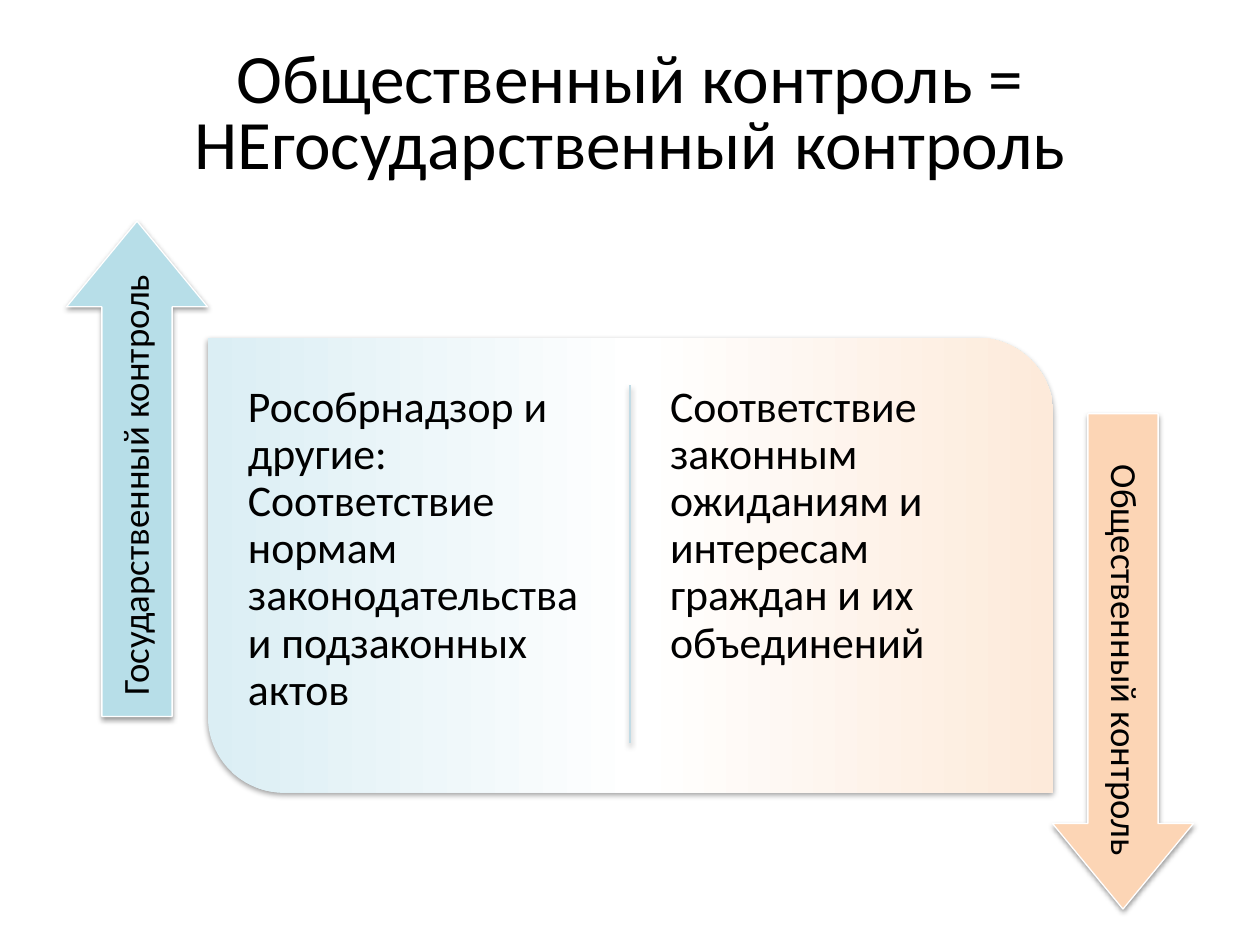
from lxml import etree
from pptx import Presentation
from pptx.dml.color import RGBColor
from pptx.enum.shapes import MSO_CONNECTOR, MSO_SHAPE
from pptx.enum.text import MSO_ANCHOR, PP_ALIGN
from pptx.oxml.ns import qn
from pptx.util import Pt

LEFT, CENTER, RIGHT = PP_ALIGN.LEFT, PP_ALIGN.CENTER, PP_ALIGN.RIGHT
TOP, MIDDLE = MSO_ANCHOR.TOP, MSO_ANCHOR.MIDDLE
PANEL, ARROW = MSO_SHAPE.ROUND_2_DIAG_RECTANGLE, MSO_SHAPE.RIGHT_ARROW
STRAIGHT = MSO_CONNECTOR.STRAIGHT

ARROW_LENGTH, ARROW_WIDTH = 283, 80.6
LABEL_LENGTH, LABEL_WIDTH = 259.2, 40.3
LABEL_SHIFT = 12.2  # from the arrow's centre towards its tail
PANEL_STOPS = [(0, "DBEEF4"), (51, "FFFFFF"), (100, "FDEADA")]
COLUMNS = [
    (134.6, "Рособрнадзор и другие: Соответствие нормам законодательства "
            "и подзаконных актов"),
    (375.8, "Соответствие законным ожиданиям и интересам граждан "
            "и их объединений"),
]
# centre x, centre y, rotation, fill, label
ARROWS = [
    (78.3, 267.9, 270, "B7DEE8", "Государственный контроль"),
    (641.7, 378, 90, "FCD5B5", "Общественный контроль"),
]


def color(hex_code):
    return RGBColor.from_string(hex_code)


def add_child(parent, tag, **attributes):
    child = etree.SubElement(parent, qn(tag))
    for name, value in attributes.items():
        child.set(name, str(value))
    return child


def add_soft_shadow(effects):
    """Fill an a:effectLst with the shadow that all drawn objects share."""
    shadow = add_child(effects, "a:outerShdw", blurRad=Pt(3.1), dist=Pt(1.6),
                       dir=90 * 60000, rotWithShape=0)
    black = add_child(shadow, "a:srgbClr", val="000000")
    add_child(black, "a:alpha", val=38000)


def add_shape(page, kind, left, top, width, height, adjustments):
    shape = page.shapes.add_shape(kind, Pt(left), Pt(top), Pt(width), Pt(height))
    for index, value in enumerate(adjustments):
        shape.adjustments[index] = value
    shape.shadow.inherit = False
    add_soft_shadow(shape.element.spPr.find(qn("a:effectLst")))
    return shape


def add_text(page, text, left, top, width, height, size, align=LEFT, anchor=TOP,
             inset=7.2, spacing=0.9, rotation=0):
    box = page.shapes.add_textbox(Pt(left), Pt(top), Pt(width), Pt(height))
    box.rotation = rotation
    frame = box.text_frame
    frame.word_wrap = True
    frame.vertical_anchor = anchor
    frame.margin_left = frame.margin_right = Pt(inset)
    frame.margin_top = frame.margin_bottom = Pt(inset)
    para = frame.paragraphs[0]
    para.alignment = align
    para.line_spacing = spacing
    span = para.add_run()
    span.text = text
    span.font.name = "Calibri"
    span.font.size = Pt(size)
    span.font.color.rgb = color("000000")


def add_panel(page):
    panel = add_shape(page, PANEL, 118.8, 193, 483.1, 259.9, [0, 0.167])
    panel.line.fill.background()
    panel.fill.gradient()
    panel.fill.gradient_angle = 0
    stops = panel.element.spPr.find(qn("a:gradFill")).find(qn("a:gsLst"))
    for stop in list(stops):
        stops.remove(stop)
    for percent, hex_code in PANEL_STOPS:
        stop = add_child(stops, "a:gs", pos=percent * 1000)
        add_child(stop, "a:srgbClr", val=hex_code)


def add_divider(page, x, top, bottom):
    divider = page.shapes.add_connector(STRAIGHT, Pt(x), Pt(top), Pt(x), Pt(bottom))
    divider.line.color.rgb = color("C1DBE5")
    divider.line.width = Pt(0.75)
    add_soft_shadow(add_child(divider.element.spPr, "a:effectLst"))


def add_labelled_arrow(page, center_x, center_y, rotation, fill, label):
    arrow = add_shape(page, ARROW, center_x - ARROW_LENGTH / 2,
                      center_y - ARROW_WIDTH / 2, ARROW_LENGTH, ARROW_WIDTH,
                      [0.498, 0.607])
    arrow.rotation = rotation
    arrow.fill.solid()
    arrow.fill.fore_color.rgb = color(fill)
    arrow.line.color.rgb = color("FFFFFF")
    arrow.line.width = Pt(0.75)
    shift = LABEL_SHIFT if rotation == 270 else -LABEL_SHIFT
    add_text(page, label, center_x - LABEL_LENGTH / 2,
             center_y + shift - LABEL_WIDTH / 2, LABEL_LENGTH, LABEL_WIDTH,
             size=21, align=RIGHT, anchor=MIDDLE, inset=6.5, rotation=rotation)


def main():
    deck = Presentation()
    deck.slide_width, deck.slide_height = Pt(720), Pt(540)
    page = deck.slides.add_slide(deck.slide_layouts[6])
    add_text(page, "Общественный контроль = НЕгосударственный контроль",
             36, 21.6, 648, 90, size=39.6, align=CENTER, anchor=MIDDLE,
             inset=3.6, spacing=0.8)
    add_panel(page)
    add_divider(page, 360, 220.3, 424.8)
    for left, text in COLUMNS:
        add_text(page, text, left, 212.4, 209.5, 220.3, size=25)
    for arrow in ARROWS:
        add_labelled_arrow(page, *arrow)
    deck.save("out.pptx")


if __name__ == "__main__":
    main()
